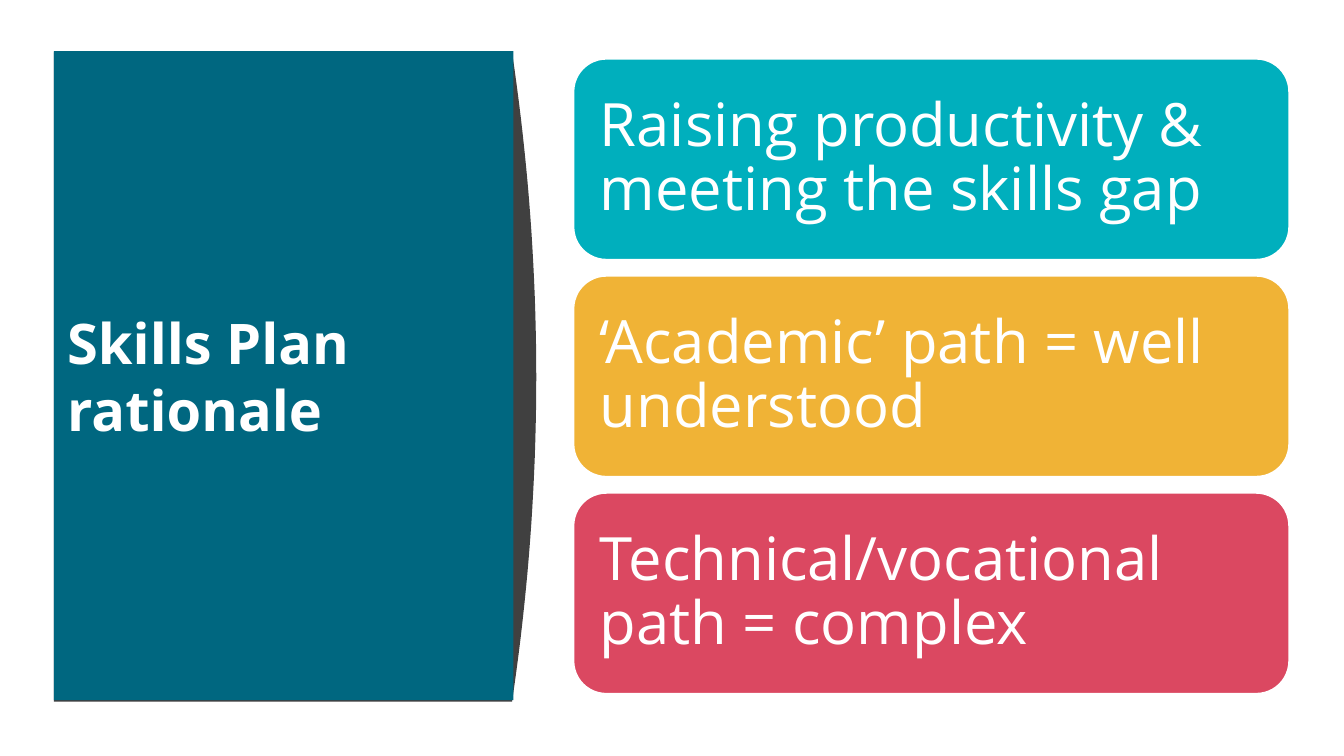
from pptx import Presentation
from pptx import util as u
from pptx.dml.color import RGBColor
from pptx.enum import shapes, text

FONT = "Open Sans"
COLOURS = {
    "white": "FFFFFF",
    "shade": "404040",
    "panel": "006780",
    "teal": "00AFBD",
    "amber": "F0B336",
    "red": "DB4861",
}
REASONS = [
    ("Raising productivity & meeting the skills gap", "teal"),
    ("‘Academic’ path = well understood", "amber"),
    ("Technical/vocational path = complex", "red"),
]
PANEL_LEFT, PANEL_RIGHT = 0.4, 3.81
PANEL_TOP, PANEL_BOTTOM = 0.39, 5.22
BULGE = 0.18
CURVE_STEPS = 40
CARD_LEFT, CARD_TOP, CARD_BOTTOM = 4.26, 0.43, 5.17
CARD_WIDTH, CARD_HEIGHT = 5.34, 1.51
CARD_PITCH = (CARD_BOTTOM - CARD_TOP - CARD_HEIGHT) / (len(REASONS) - 1)


def colour(name):
    return RGBColor.from_string(COLOURS[name])


def fill_shape(shape, name):
    shape.fill.solid()
    shape.fill.fore_color.rgb = colour(name)


def write_text(shape, words, size, spacing, inset, bold=False):
    frame = shape.text_frame
    frame.word_wrap = True
    frame.auto_size = text.MSO_AUTO_SIZE.NONE
    frame.vertical_anchor = text.MSO_ANCHOR.MIDDLE
    frame.margin_left = frame.margin_right = u.Inches(inset)
    paragraph = frame.paragraphs[0]
    paragraph.alignment = text.PP_ALIGN.LEFT
    paragraph.line_spacing = spacing
    run = paragraph.add_run()
    run.text = words
    run.font.name = FONT
    run.font.size = u.Pt(size)
    run.font.bold = bold
    run.font.color.rgb = colour("white")


def add_curved_shade(slide):
    curve = []
    for step in range(CURVE_STEPS + 1):
        portion = step / CURVE_STEPS
        x = PANEL_RIGHT + BULGE * 4 * portion * (1 - portion)
        y = PANEL_TOP + (PANEL_BOTTOM - PANEL_TOP) * portion
        curve.append((u.Inches(x), u.Inches(y)))
    left = u.Inches(PANEL_LEFT)
    builder = slide.shapes.build_freeform(left, u.Inches(PANEL_TOP))
    builder.add_line_segments(curve + [(left, u.Inches(PANEL_BOTTOM))], close=True)
    shape = builder.convert_to_shape()
    shape.shadow.inherit = False
    fill_shape(shape, "shade")
    shape.line.fill.background()
    return shape


def place_title(slide, shade):
    title = slide.shapes.title
    title.left, title.top = u.Inches(PANEL_LEFT), u.Inches(0.38)
    title.width, title.height = u.Inches(3.42), u.Inches(4.83)
    fill_shape(title, "panel")
    write_text(title, "Skills Plan rationale", 30, 1.0, 0.1, bold=True)
    shade.element.addnext(title.element)


def add_card(slide, top, words, fill):
    card = slide.shapes.add_shape(
        shapes.MSO_SHAPE.ROUNDED_RECTANGLE,
        u.Inches(CARD_LEFT), u.Inches(top), u.Inches(CARD_WIDTH), u.Inches(CARD_HEIGHT),
    )
    card.shadow.inherit = False
    fill_shape(card, fill)
    card.line.color.rgb = colour("white")
    card.line.width = u.Pt(2)
    write_text(card, words, 32, 0.9, 0.13)


def main():
    presentation = Presentation()
    presentation.slide_width = u.Inches(10)
    presentation.slide_height = presentation.slide_width * 9 // 16
    slide = presentation.slides.add_slide(presentation.slide_layouts[5])
    shade = add_curved_shade(slide)
    place_title(slide, shade)
    for index, (words, fill) in enumerate(REASONS):
        add_card(slide, CARD_TOP + index * CARD_PITCH, words, fill)
    presentation.save("out.pptx")


if __name__ == "__main__":
    main()
